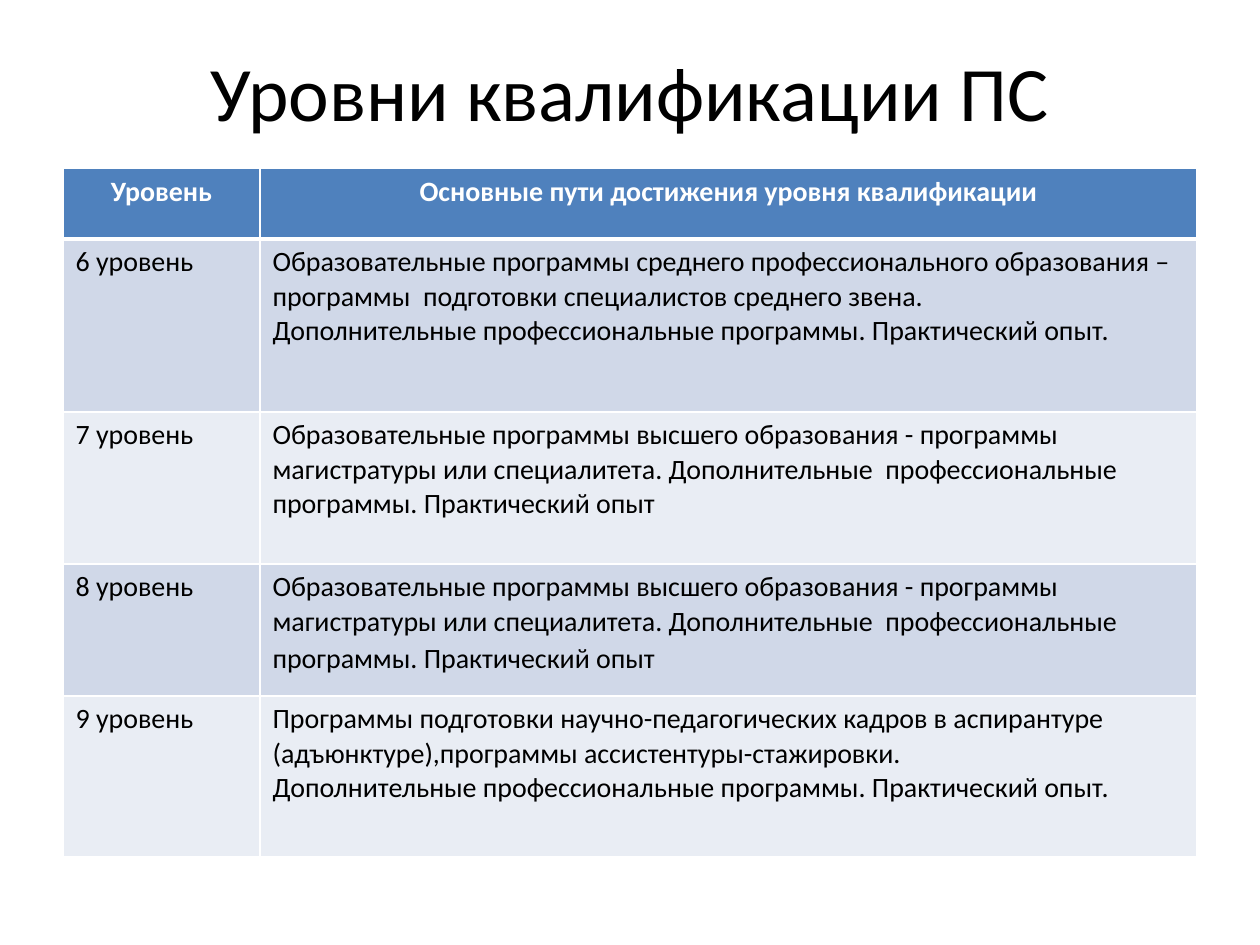
from dataclasses import dataclass

from lxml import etree
from pptx import Presentation, util as u
from pptx.dml.color import RGBColor
from pptx.enum import text
from pptx.oxml import ns

COLORS = {
    "white": "FFFFFF",
    "black": "000000",
    "header": "4F81BD",
    "odd": "D0D8E8",
    "even": "E9EDF4",
}
FONT = "Calibri"
EMU_PER_PX = 914400 / 126
COLUMN_WIDTHS = (197, 937)


@dataclass(frozen=True)
class Level:
    name: str
    paths: tuple[str, ...]
    height: int
    end_size: int = 16


HEADER = Level("Уровень", ("Основные пути достижения уровня квалификации",), 71)
LEVELS = (
    Level("6 уровень", (
        "Образовательные программы среднего профессионального образования – "
        "программы  подготовки специалистов среднего звена. ",
        "Дополнительные профессиональные программы. Практический опыт. ",
    ), 173),
    Level("7 уровень", (
        "Образовательные программы высшего образования - программы  "
        "магистратуры или специалитета. Дополнительные  профессиональные "
        "  программы. Практический опыт ",
    ), 152),
    Level("8 уровень", (
        "Образовательные программы высшего образования - "
        "программы магистратуры или специалитета. Дополнительные "
        " профессиональные  программы. Практический опыт",
    ), 132, end_size=18),
    Level("9 уровень", (
        "Программы подготовки научно-педагогических кадров в аспирантуре "
        "(адъюнктуре),программы ассистентуры-стажировки. ",
        "Дополнительные профессиональные программы. Практический опыт. ",
    ), 161),
)


def px(length: int) -> int:
    return round(length * EMU_PER_PX)


def add_span(para, words: str, *, size: int = 16, color: str = "black",
             bold: bool = False, align=text.PP_ALIGN.LEFT) -> None:
    para.alignment = align
    span = para.add_run()
    span.text = words
    span.font.name = FONT
    span.font.size = u.Pt(size)
    span.font.bold = bold
    span.font.color.rgb = RGBColor.from_string(COLORS[color])


def add_borders(cell, bottom: int = 1, top: int = 1) -> None:
    """Draw white cell borders; widths are in points."""
    properties = cell._tc.get_or_add_tcPr()
    widths = {"lnL": 1, "lnR": 1, "lnT": top, "lnB": bottom}
    for index, (side, width) in enumerate(widths.items()):
        line = etree.Element(ns.qn(f"a:{side}"), w=str(u.Pt(width)))
        fill = etree.SubElement(line, ns.qn("a:solidFill"))
        etree.SubElement(fill, ns.qn("a:srgbClr"), val=COLORS["white"])
        properties.insert(index, line)


def fill_cell(cell, paragraphs: tuple[str, ...], fill: str, **style) -> None:
    cell.fill.solid()
    cell.fill.fore_color.rgb = RGBColor.from_string(COLORS[fill])
    cell.vertical_anchor = text.MSO_ANCHOR.TOP
    frame = cell.text_frame
    for index, words in enumerate(paragraphs):
        para = frame.add_paragraph() if index else frame.paragraphs[0]
        add_span(para, words, **style)


def add_title(page) -> None:
    title = page.shapes.title
    title.left, title.top, title.width, title.height = map(px, (63, 38, 1134, 106))
    title.text_frame.vertical_anchor = text.MSO_ANCHOR.MIDDLE
    add_span(title.text_frame.paragraphs[0], "Уровни квалификации ПС",
             size=44, align=text.PP_ALIGN.CENTER)


def add_levels_table(page) -> None:
    rows = (HEADER, *LEVELS)
    height = sum(level.height for level in rows)
    table = page.shapes.add_table(
        len(rows), len(COLUMN_WIDTHS),
        *map(px, (63, 168, sum(COLUMN_WIDTHS), height))).table
    for column, width in zip(table.columns, COLUMN_WIDTHS):
        column.width = px(width)
    for index, level in enumerate(rows):
        table.rows[index].height = px(level.height)
        if index == 0:
            fill = "header"
            style = dict(color="white", bold=True, align=text.PP_ALIGN.CENTER)
        else:
            fill, style = ("odd" if index % 2 else "even"), {}
        for column, words in enumerate(((level.name,), level.paths)):
            cell = table.cell(index, column)
            fill_cell(cell, words, fill, **style)
            add_borders(cell, bottom=1 if index else 3, top=3 if index == 1 else 1)
        if level.end_size != 16:
            add_span(cell.text_frame.paragraphs[-1], " ", size=level.end_size)


def main() -> None:
    deck = Presentation()
    deck.slide_width, deck.slide_height = px(1260), px(945)
    page = deck.slides.add_slide(deck.slide_layouts[5])
    add_title(page)
    add_levels_table(page)
    deck.save("out.pptx")


if __name__ == "__main__":
    main()
